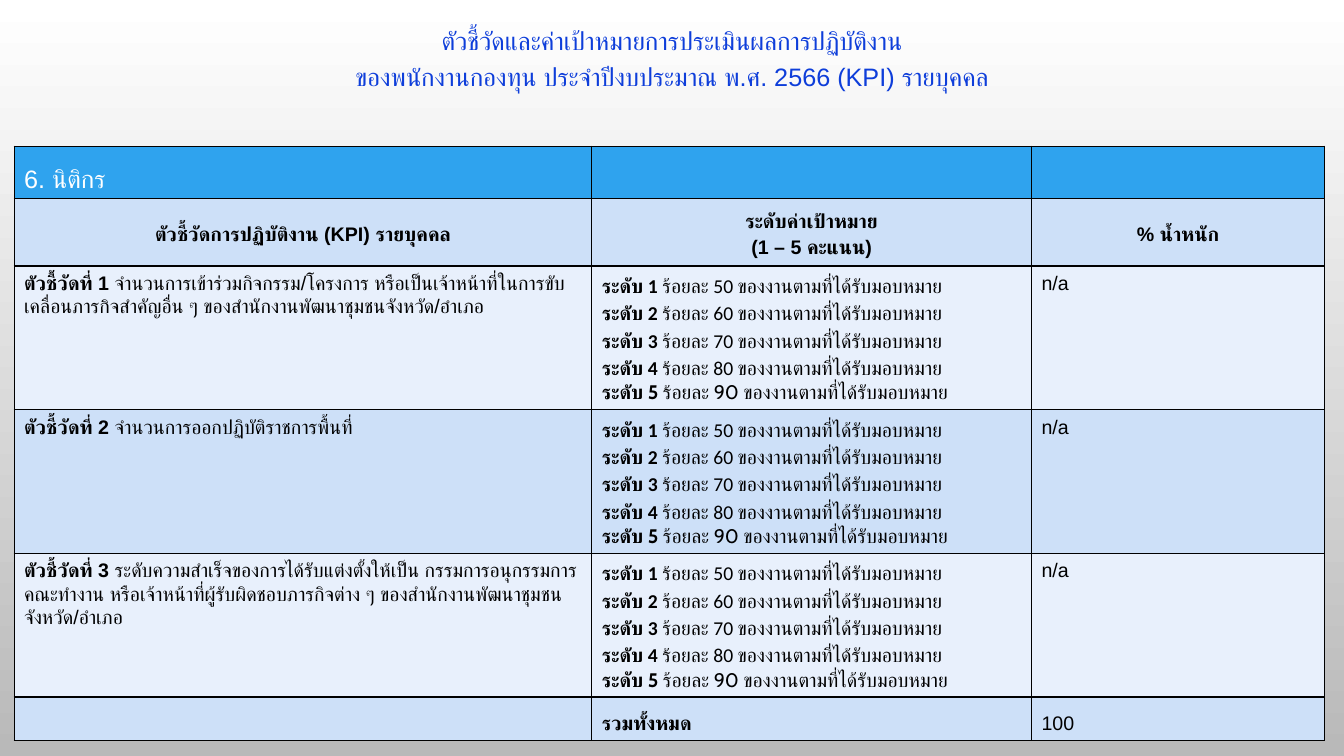
from dataclasses import dataclass
from typing import Optional, Union

from lxml import etree
from pptx import Presentation
from pptx import util as u
from pptx.dml.color import RGBColor
from pptx.enum import text
from pptx.oxml import ns


@dataclass(frozen=True)
class Theme:
    title: str = "0E3EDA"
    band: str = "2FA3EE"
    dark: str = "CDE0F8"
    light: str = "E8F0FC"
    white: str = "FFFFFF"
    black: str = "000000"
    bg_end: str = "B9B9B9"
    big: int = 18
    body: int = 14
    font: str = "Arial"
    level_font: str = "Calibri"
    last_level_font: str = "Cabin"


@dataclass(frozen=True)
class Indicator:
    label: str
    goal: str
    weight: str = "n/a"


T = Theme()
LEFT, CENTER = text.PP_ALIGN.LEFT, text.PP_ALIGN.CENTER
TOP, MIDDLE = text.MSO_ANCHOR.TOP, text.MSO_ANCHOR.MIDDLE
EXACT = u.Pt(16.8)

TITLE = [
    "ตัวชี้วัดและค่าเป้าหมายการประเมินผลการปฏิบัติงาน",
    "ของพนักงานกองทุน ประจำปีงบประมาณ พ.ศ. 2566 (KPI) รายบุคคล",
]
HEADERS = [
    ["ตัวชี้วัดการปฏิบัติงาน (KPI) รายบุคคล"],
    ["ระดับค่าเป้าหมาย", "(1 – 5 คะแนน)"],
    ["% น้ำหนัก"],
]
INDICATORS = [
    Indicator("ตัวชี้วัดที่ 1 ", "จำนวนการเข้าร่วมกิจกรรม/โครงการ หรือเป็นเจ้าหน้าที่ในการขับเคลื่อนภารกิจสำคัญอื่น ๆ ของสำนักงานพัฒนาชุมชนจังหวัด/อำเภอ"),
    Indicator("ตัวชี้วัดที่ 2 ", "จำนวนการออกปฏิบัติราชการพื้นที่"),
    Indicator("ตัวชี้วัดที่ 3 ", "ระดับความสำเร็จของการได้รับแต่งตั้งให้เป็น กรรมการอนุกรรมการ คณะทำงาน หรือเจ้าหน้าที่ผู้รับผิดชอบภารกิจต่าง ๆ ของสำนักงานพัฒนาชุมชนจังหวัด/อำเภอ"),
]
LEVELS = range(1, 6)
COLS = [5.73, 4.36, 2.91]
ROWS = [0.44, 0.67, 1.25, 1.25, 1.25, 0.43]


def add_text(tf, content: str, *, lead: str = "", size: int = T.body,
             font: str = T.font, color: str = T.black, bold: bool = False,
             align=LEFT, spacing: Optional[Union[float, u.Length]] = None) -> None:
    p = tf.paragraphs[0] if not tf.text else tf.add_paragraph()
    p.alignment = align
    p.line_spacing = spacing
    for words, heavy in ((lead, True), (content, bold)):
        if not words:
            continue
        r = p.add_run()
        r.text = words
        r.font.size = u.Pt(size)
        r.font.name = font
        r.font.bold = heavy
        r.font.color.rgb = RGBColor.from_string(color)
        etree.SubElement(r.font._element, ns.qn("a:cs"), typeface=font)


def style_cell(cell, fill: str, anchor=TOP) -> None:
    cell.vertical_anchor = anchor
    pr = cell._tc.get_or_add_tcPr()
    for side in ("lnL", "lnR", "lnT", "lnB"):
        ln = etree.SubElement(pr, ns.qn(f"a:{side}"), w=str(u.Pt(1)))
        solid = etree.SubElement(ln, ns.qn("a:solidFill"))
        etree.SubElement(solid, ns.qn("a:srgbClr"), val=T.black)
    cell.fill.solid()
    cell.fill.fore_color.rgb = RGBColor.from_string(fill)


def add_title(s) -> None:
    sp = s.shapes.title
    sp.left, sp.top = u.Inches(0), u.Inches(0.14)
    sp.width, sp.height = u.Inches(13.33), u.Inches(1.23)
    tf = sp.text_frame
    tf.word_wrap = True
    tf.auto_size = text.MSO_AUTO_SIZE.NONE
    tf.vertical_anchor = TOP
    for line in TITLE:
        add_text(tf, line, size=T.big, color=T.title, align=CENTER, spacing=1.2)


def add_levels(tf) -> None:
    for level in LEVELS:
        last = level == LEVELS[-1]
        add_text(tf, f"ร้อยละ {40 + 10 * level} ของงานตามที่ได้รับมอบหมาย",
                 lead=f"ระดับ {level} ",
                 font=T.last_level_font if last else T.level_font,
                 spacing=1.0 if last else 1.15)


def add_kpi_table(s) -> None:
    tbl = s.shapes.add_table(len(ROWS), len(COLS), u.Inches(0.14), u.Inches(1.45),
                             u.Inches(sum(COLS)), u.Inches(sum(ROWS))).table
    for column, width in zip(tbl.columns, COLS):
        column.width = u.Inches(width)
    fills = [T.band, T.dark, T.light, T.dark, T.light, T.dark]
    for i, (row, height, fill) in enumerate(zip(tbl.rows, ROWS, fills)):
        row.height = u.Inches(height)
        for cell in row.cells:
            style_cell(cell, fill, MIDDLE if i < 2 else TOP)

    add_text(tbl.cell(0, 0).text_frame, "6. นิติกร", size=T.big, color=T.white, spacing=1.5)
    for j, lines in enumerate(HEADERS):
        for line in lines:
            add_text(tbl.cell(1, j).text_frame, line, bold=True, align=CENTER, spacing=1.2)
    for i, kpi in enumerate(INDICATORS, 2):
        add_text(tbl.cell(i, 0).text_frame, kpi.goal, lead=kpi.label, spacing=EXACT)
        add_levels(tbl.cell(i, 1).text_frame)
        add_text(tbl.cell(i, 2).text_frame, kpi.weight, spacing=EXACT)
    total = len(ROWS) - 1
    add_text(tbl.cell(total, 1).text_frame, "รวมทั้งหมด", bold=True, spacing=1.5)
    add_text(tbl.cell(total, 2).text_frame, "100", spacing=1.5)


def main() -> None:
    prs = Presentation()
    prs.slide_width, prs.slide_height = u.Inches(13.33), u.Inches(7.5)
    s = prs.slides.add_slide(prs.slide_layouts[5])
    fill = s.background.fill
    fill.gradient()
    fill.gradient_angle = 270
    for stop, color in zip(fill.gradient_stops, (T.white, T.bg_end)):
        stop.color.rgb = RGBColor.from_string(color)
    add_title(s)
    add_kpi_table(s)
    prs.save("out.pptx")


if __name__ == "__main__":
    main()
